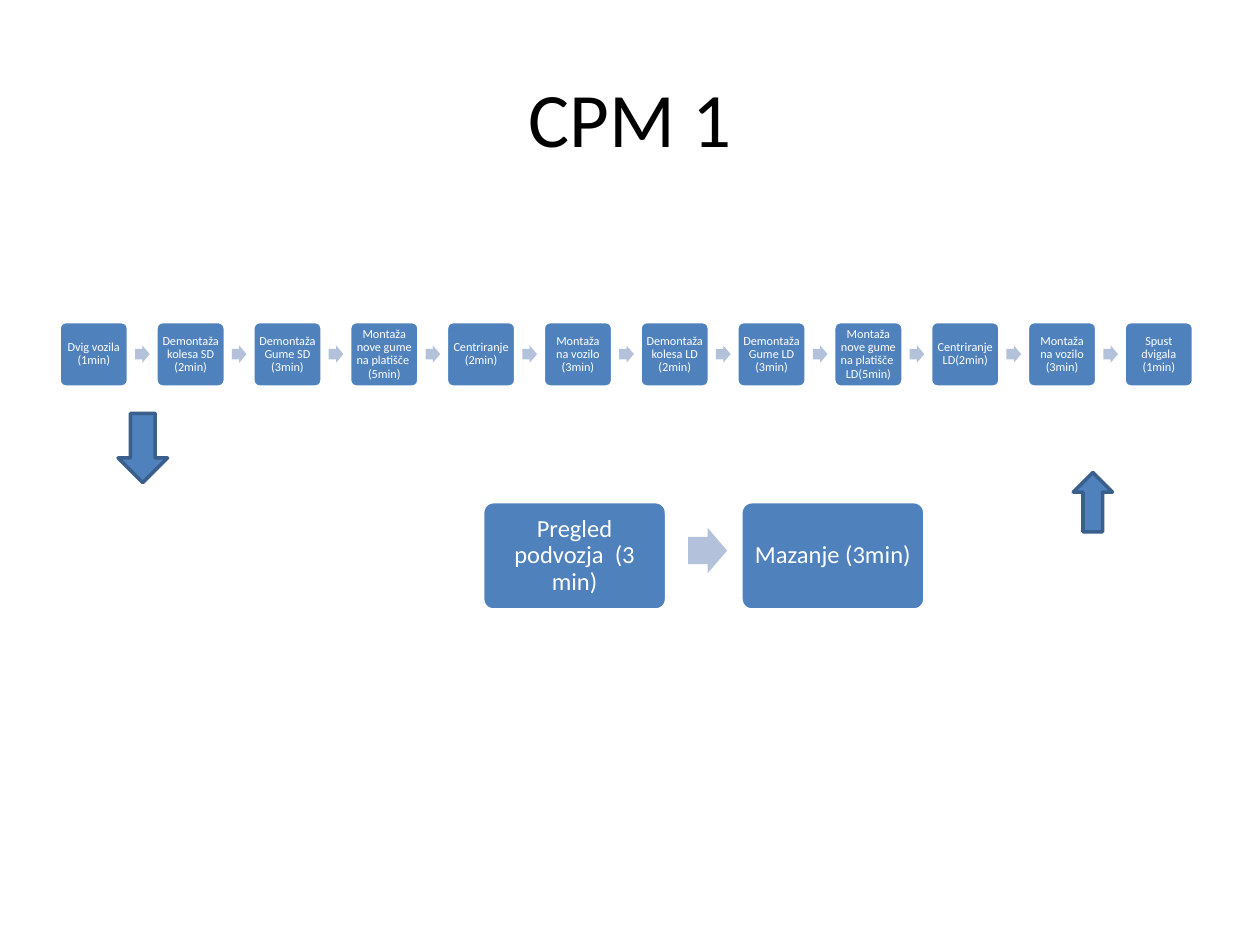
from pptx import Presentation
from pptx.dml.color import RGBColor
from pptx.enum.shapes import MSO_SHAPE as Shape
from pptx.enum.text import MSO_ANCHOR as Anchor, PP_ALIGN as Align
from pptx.util import Pt

BLACK = RGBColor(0x00, 0x00, 0x00)
WHITE = RGBColor(0xFF, 0xFF, 0xFF)
BLUE = RGBColor(0x4F, 0x81, 0xBD)
DARK_BLUE = RGBColor(0x3A, 0x5F, 0x8C)
PALE_BLUE = RGBColor(0xB3, 0xC1, 0xDB)
FONT = "Calibri"

WHEEL_STEPS = [
    "Dvig vozila (1min)",
    "Demontaža kolesa SD (2min)",
    "Demontaža Gume SD (3min)",
    "Montaža nove gume na platišče  (5min)",
    "Centriranje (2min)",
    "Montaža na vozilo (3min)",
    "Demontaža kolesa LD (2min)",
    "Demontaža Gume LD (3min)",
    "Montaža nove gume na platišče  LD(5min)",
    "Centriranje LD(2min)",
    "Montaža na vozilo (3min)",
    "Spust dvigala (1min)",
]
CHASSIS_STEPS = ["Pregled podvozja  (3 min)", "Mazanje (3min)"]


def write(frame, text, size, color):
    frame.word_wrap = True
    frame.vertical_anchor = Anchor.MIDDLE
    paragraph = frame.paragraphs[0]
    paragraph.alignment = Align.CENTER
    run = paragraph.add_run()
    run.text = text
    run.font.name = FONT
    run.font.size = Pt(size)
    run.font.color.rgb = color
    return paragraph


def add_block(shapes, preset, box, fill, line=None):
    block = shapes.add_shape(preset, *map(Pt, box))
    block.shadow.inherit = False
    block.fill.solid()
    block.fill.fore_color.rgb = fill
    if line is None:
        block.line.fill.background()
    else:
        block.line.color.rgb = line
        block.line.width = Pt(2)
    return block


def add_title(slide, box, text):
    title = slide.shapes.title
    title.left, title.top, title.width, title.height = map(Pt, box)
    write(title.text_frame, text, 44, BLACK)


def add_step(shapes, box, text, size):
    step = add_block(shapes, Shape.ROUNDED_RECTANGLE, box, BLUE, WHITE)
    step.adjustments[0] = 0.1
    frame = step.text_frame
    margin = Pt(0.3 * size)
    frame.margin_left = frame.margin_right = margin
    frame.margin_top = frame.margin_bottom = margin
    write(frame, text, size, WHITE).line_spacing = 0.9


def add_process(slide, box, steps, step_width, arrow, size):
    left, top, width, height = box
    arrow_x, arrow_y, arrow_width, arrow_height = arrow
    pitch = (width - step_width) / (len(steps) - 1)
    shapes = slide.shapes.add_group_shape().shapes
    for i, text in enumerate(steps):
        x = left + i * pitch
        add_step(shapes, (x, top, step_width, height), text, size)
        if i < len(steps) - 1:
            arrow_box = (x + arrow_x, top + arrow_y, arrow_width, arrow_height)
            link = add_block(shapes, Shape.RIGHT_ARROW, arrow_box, PALE_BLUE)
            link.adjustments[0] = 0.6


def main():
    deck = Presentation()
    deck.slide_width, deck.slide_height = Pt(720), Pt(540)
    slide = deck.slides.add_slide(deck.slide_layouts[5])
    add_title(slide, (36, 21.6, 648, 90), "CPM 1")
    add_process(slide, (33.8, 183.8, 648.2, 37.4), WHEEL_STEPS,
                39.6, (43.4, 13.6, 8.4, 9.9), 7)
    add_process(slide, (275.8, 286.7, 252.7, 61.9), CHASSIS_STEPS,
                105.1, (117.4, 15, 22.3, 25.9), 14)
    add_block(slide.shapes, Shape.DOWN_ARROW, (67.5, 236.2, 28.3, 39.6), BLUE, DARK_BLUE)
    add_block(slide.shapes, Shape.UP_ARROW, (613.3, 270, 22.4, 33.9), BLUE, DARK_BLUE)
    deck.save("out.pptx")


if __name__ == "__main__":
    main()
